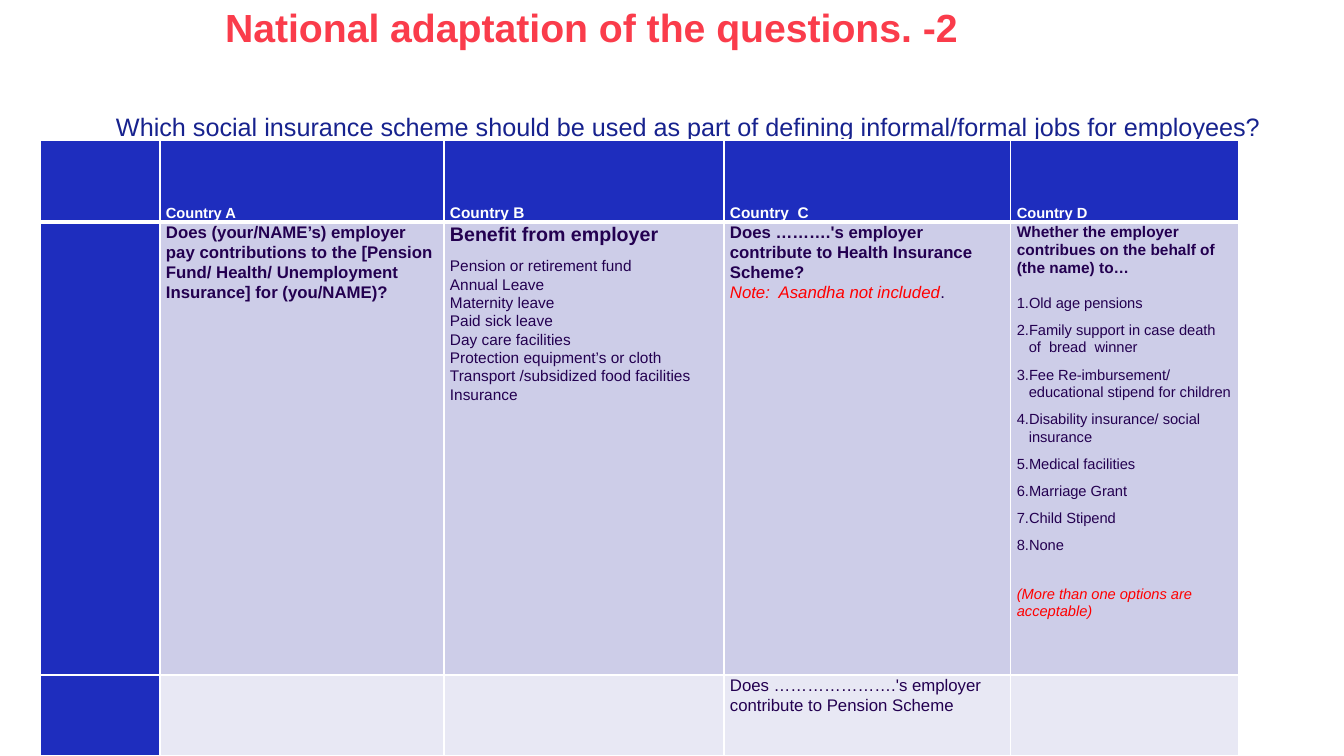
from lxml import etree
from pptx import Presentation
from pptx import util as u
from pptx.dml.color import RGBColor
from pptx.enum import text
from pptx.oxml.ns import qn

PX = 914400 / 100.8
COLOURS = {
    "title": "FA3C4B", "question": "17228E", "header": "1E2DBE",
    "band": "CDCDE8", "light": "E8E8F4", "ink": "230050",
    "note": "FF0000", "white": "FFFFFF",
}


def px(count):
    return u.Emu(round(count * PX))


def write(frame, words, size, colour="ink", bold=False, italic=False,
          before=0, after=0, spacing=1.07, hang=0):
    para = frame.paragraphs[0]
    if para.text:
        para = frame.add_paragraph()
    para.line_spacing = spacing
    para.space_before = u.Pt(before)
    para.space_after = u.Pt(after)
    if hang:
        properties = para._p.get_or_add_pPr()
        properties.set("marL", str(px(hang)))
        properties.set("indent", str(-px(hang)))
    para.add_run().text = words
    para.font.name = "Arial"
    para.font.size = u.Pt(size)
    para.font.bold = bold
    para.font.italic = italic
    para.font.color.rgb = RGBColor.from_string(COLOURS[colour])
    return para


deck = Presentation()
deck.slide_width, deck.slide_height = px(1344), px(756)
page = deck.slides.add_slide(deck.slide_layouts[6])

# Title and question
headings = [
    ("National adaptation of the questions. -2",
     (225, 9, 1092, 80), 28, "title", True, 0.9),
    ("Which social insurance scheme should be used as part of defining "
     "informal/formal jobs for employees?",
     (116, 108, 1187, 47), 18, "question", False, 1.1),
]
for words, place, size, colour, bold, spacing in headings:
    box = page.shapes.add_textbox(*map(px, place))
    frame = box.text_frame
    frame.word_wrap = True
    frame.margin_left = frame.margin_right = 0
    frame.margin_top = frame.margin_bottom = 0
    write(frame, words, size, colour, bold, spacing=spacing)

# Table grid
widths = [120, 284, 280, 287, 228]
heights = [82, 453, 81]
table = page.shapes.add_table(len(heights), len(widths), px(40), px(140),
                              px(sum(widths)), px(sum(heights))).table
table.horz_banding = False
for column, width in zip(table.columns, widths):
    column.width = px(width)
for row, height in zip(table.rows, heights):
    row.height = px(height)

# Cell borders, fills and margins
row_fills = ["header", "band", "light"]
for r, row in enumerate(table.rows):
    for c, cell in enumerate(row.cells):
        cell.margin_left = cell.margin_right = px(6)
        cell.margin_top = cell.margin_bottom = 0
        if r == 0:
            cell.vertical_anchor = text.MSO_ANCHOR.BOTTOM
        properties = cell._tc.get_or_add_tcPr()
        for side in "LRTB":
            thick = (r, side) in [(0, "B"), (1, "T")]
            line = etree.SubElement(properties, qn(f"a:ln{side}"),
                                    w=str(u.Pt(3 if thick else 1)))
            solid = etree.SubElement(line, qn("a:solidFill"))
            etree.SubElement(solid, qn("a:srgbClr"), val=COLOURS["white"])
        cell.fill.solid()
        cell.fill.fore_color.rgb = RGBColor.from_string(
            COLOURS["header" if c == 0 else row_fills[r]])

# Header row
countries = [("Country A", 10.5), ("Country B", 11),
             ("Country  C", 11), ("Country D", 10.5)]
for c, (country, size) in enumerate(countries, start=1):
    write(table.cell(0, c).text_frame, country, size, "white", bold=True)

# Country A
write(table.cell(1, 1).text_frame,
      "Does (your/NAME’s) employer pay contributions to the [Pension Fund/ "
      "Health/ Unemployment Insurance] for (you/NAME)?", 12, bold=True)

# Country B
benefits = table.cell(1, 2).text_frame
write(benefits, "Benefit from employer", 14, bold=True, after=8)
for benefit in ["Pension or retirement fund", "Annual Leave",
                "Maternity leave", "Paid sick leave", "Day care facilities",
                "Protection equipment’s or cloth",
                "Transport /subsidized food facilities", "Insurance"]:
    write(benefits, benefit, 11)

# Country C
health = table.cell(1, 3).text_frame
write(health, "Does ……….'s employer contribute to Health Insurance Scheme?",
      12, bold=True)
note = write(health, "Note:  Asandha not included", 12, "note", italic=True)
span = note.add_run()
span.text = "."
span.font.italic = False
span.font.color.rgb = RGBColor.from_string(COLOURS["ink"])
write(table.cell(2, 3).text_frame,
      "Does ………………….'s employer contribute to Pension Scheme", 12)

# Country D
options = table.cell(1, 4).text_frame
write(options, "Whether the employer contribues on the behalf of (the name) "
      "to…", 11, bold=True)
choices = ["Old age pensions",
           "Family support in case death  of  bread  winner",
           "Fee Re-imbursement/ educational stipend for children",
           "Disability insurance/ social insurance",
           "Medical facilities", "Marriage Grant", "Child Stipend", "None"]
for number, choice in enumerate(choices, start=1):
    write(options, f"{number}.{choice}", 10.5,
          before=12 if number == 1 else 7, hang=12)
write(options, "(More than one options are acceptable)", 10.5, "note",
      italic=True, before=22)

deck.save("out.pptx")
